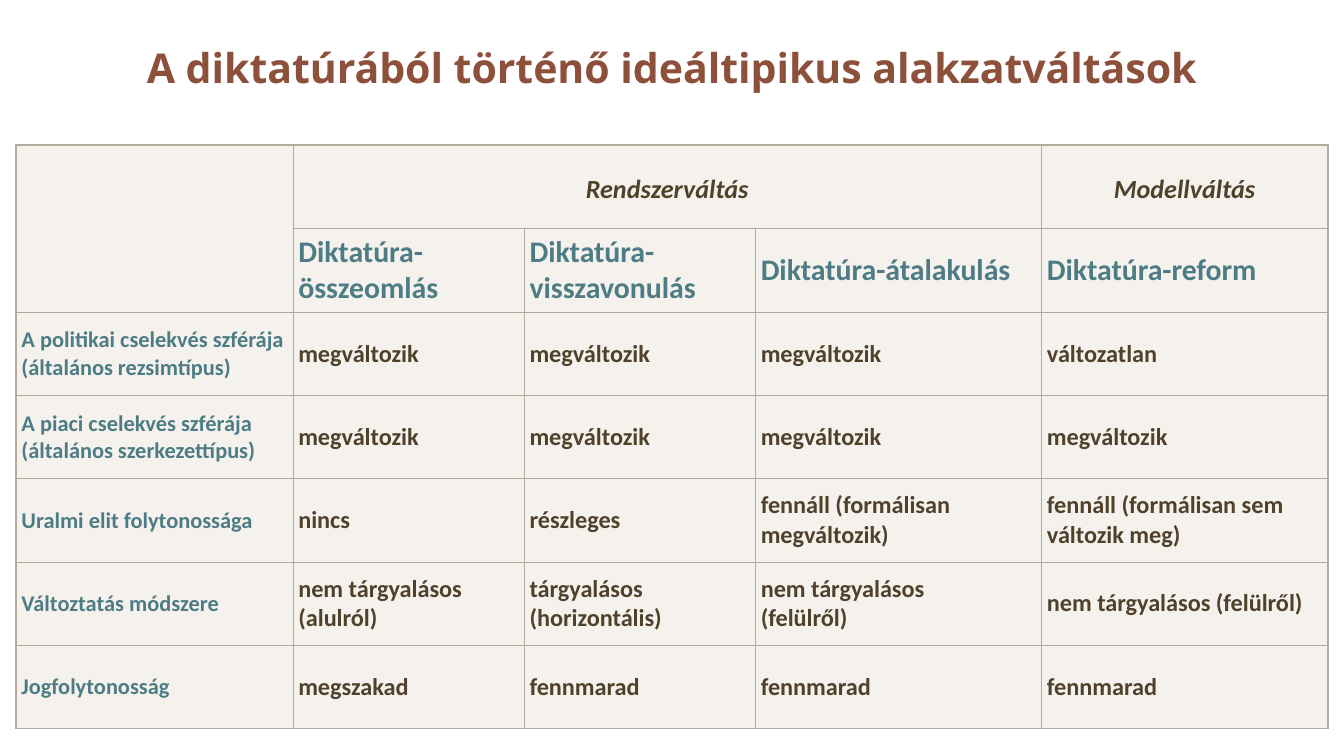
from lxml import etree
from pptx import Presentation
from pptx.dml.color import RGBColor
from pptx.enum.text import MSO_ANCHOR, PP_ALIGN
from pptx.oxml.ns import qn
from pptx.util import Pt

MIDDLE = MSO_ANCHOR.MIDDLE
LEFT, CENTER = PP_ALIGN.LEFT, PP_ALIGN.CENTER

COLORS = {
    "title": "8D503B",
    "text": "50412B",
    "label": "4D7C85",
    "fill": "EFEAE4",
    "border": "B3A99D",
}
MARGIN = 8.64
WIDTH = 702.72
COL_WIDTHS = [148.32, 123.9, 123.9, 153.3, 153.3]
ROW_HEIGHT = 44.64

ROWS = [
    ["", "Rendszerváltás", "", "", "Modellváltás"],
    ["", "Diktatúra-összeomlás", "Diktatúra-visszavonulás",
     "Diktatúra-átalakulás", "Diktatúra-reform"],
    ["A politikai cselekvés szférája (általános rezsimtípus)",
     "megváltozik", "megváltozik", "megváltozik", "változatlan"],
    ["A piaci cselekvés szférája (általános szerkezettípus)",
     "megváltozik", "megváltozik", "megváltozik", "megváltozik"],
    ["Uralmi elit folytonossága", "nincs", "részleges",
     "fennáll (formálisan megváltozik)",
     "fennáll (formálisan sem változik meg)"],
    ["Változtatás módszere", "nem tárgyalásos (alulról)",
     "tárgyalásos (horizontális)", "nem tárgyalásos\n(felülről)",
     "nem tárgyalásos (felülről)"],
    ["Jogfolytonosság", "megszakad", "fennmarad", "fennmarad", "fennmarad"],
]


def write(tf, text, size=13, color="text", font="Calibri", italic=False,
          align=LEFT, spacing=None):
    p = tf.paragraphs[0]
    p.text = text.replace("\n", "\v")
    p.alignment = align
    if spacing:
        p.line_spacing = spacing
    for r in p.runs:
        r.font.name = font
        r.font.size = Pt(size)
        r.font.bold = True
        r.font.italic = italic
        r.font.color.rgb = RGBColor.from_string(COLORS[color])


def cell_format(row, col):
    """Text format by the cell's role in the table."""
    if row == 0:
        return dict(size=14, italic=True, align=CENTER, spacing=1.15)
    if row == 1:
        return dict(size=16, color="label")
    if col == 0:
        return dict(size=12, color="label")
    return {}


class SlideBuilder:
    def __init__(self, slide, inset=2.88, inner=0.5, outer=1, opacity=60):
        self.slide = slide
        self.inset = Pt(inset)
        self.inner = inner
        self.outer = outer
        self.opacity = opacity

    def title(self, text, x, y, w, h):
        sp = self.slide.shapes.title
        sp.left, sp.top, sp.width, sp.height = Pt(x), Pt(y), Pt(w), Pt(h)
        sp.text_frame.vertical_anchor = MIDDLE
        sp.text_frame.word_wrap = True
        write(sp.text_frame, text, size=22, color="title", font="Open Sans",
              align=CENTER)

    def style_cell(self, cell, edges):
        cell.vertical_anchor = MIDDLE
        cell.margin_left = cell.margin_right = self.inset
        cell.margin_top = cell.margin_bottom = self.inset
        cell.fill.solid()
        cell.fill.fore_color.rgb = RGBColor.from_string(COLORS["fill"])
        tc_pr = cell._tc.get_or_add_tcPr()
        clr = tc_pr.find(qn("a:solidFill")).find(qn("a:srgbClr"))
        etree.SubElement(clr, qn("a:alpha"), val=str(self.opacity * 1000))
        # Borders come before the fill in the cell properties
        for i, (side, is_outer) in enumerate(edges.items()):
            width = self.outer if is_outer else self.inner
            ln = etree.Element(qn("a:ln" + side), w=str(Pt(width)))
            fill = etree.SubElement(ln, qn("a:solidFill"))
            etree.SubElement(fill, qn("a:srgbClr"), val=COLORS["border"])
            tc_pr.insert(i, ln)

    def table(self, rows, x, y, col_widths, row_height, merges):
        n_rows, n_cols = len(rows), len(col_widths)
        frame = self.slide.shapes.add_table(
            n_rows, n_cols, Pt(x), Pt(y),
            Pt(sum(col_widths)), Pt(row_height * n_rows))
        table = frame.table
        table.first_row = table.horz_banding = False
        for column, width in zip(table.columns, col_widths):
            column.width = Pt(width)
        for row in table.rows:
            row.height = Pt(row_height)
        for start, end in merges:
            table.cell(*start).merge(table.cell(*end))
        for i, texts in enumerate(rows):
            for j, text in enumerate(texts):
                cell = table.cell(i, j)
                self.style_cell(cell, {"L": j == 0, "R": j == n_cols - 1,
                                       "T": i == 0, "B": i == n_rows - 1})
                if text:
                    write(cell.text_frame, text, **cell_format(i, j))


def main():
    prs = Presentation()
    prs.slide_width, prs.slide_height = Pt(720), Pt(405)
    s = SlideBuilder(prs.slides.add_slide(prs.slide_layouts[5]))

    # Title
    s.title("A diktatúrából történő ideáltipikus alakzatváltások",
            MARGIN, 0, WIDTH, 72)

    # Comparison table: blank corner and one heading over three columns
    s.table(ROWS, MARGIN, 77.76, COL_WIDTHS, ROW_HEIGHT,
            merges=[((0, 0), (1, 0)), ((0, 1), (0, 3))])

    prs.save("out.pptx")


if __name__ == "__main__":
    main()
